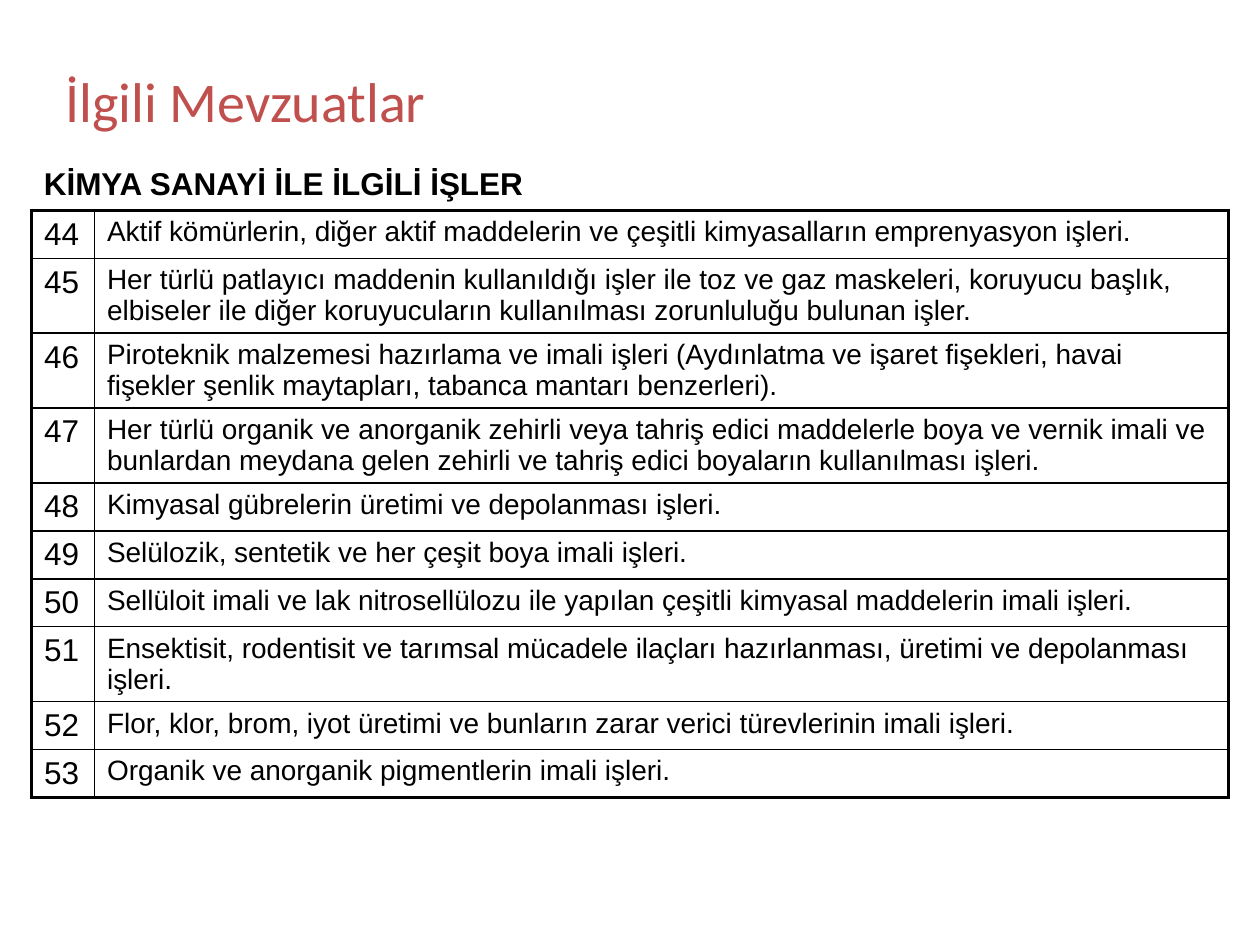
from lxml.etree import SubElement
from pptx import Presentation
from pptx.dml.color import RGBColor
from pptx.enum.text import MSO_ANCHOR, PP_ALIGN
from pptx.oxml.ns import qn
from pptx.util import Inches, Pt

COLORS = {"title": "C0504D", "text": "000000", "border": "000000"}
TITLE = "İlgili Mevzuatlar"
HEADING = "KİMYA SANAYİ İLE İLGİLİ İŞLER"
FIRST_NUMBER = 44
JOBS = [
    "Aktif kömürlerin, diğer aktif maddelerin ve çeşitli kimyasalların emprenyasyon işleri.",
    "Her türlü patlayıcı maddenin kullanıldığı işler ile toz ve gaz maskeleri, koruyucu başlık, "
    "elbiseler ile diğer koruyucuların kullanılması zorunluluğu bulunan işler.",
    "Piroteknik malzemesi hazırlama ve imali işleri (Aydınlatma ve işaret fişekleri, havai "
    "fişekler şenlik maytapları, tabanca mantarı benzerleri).",
    "Her türlü organik ve anorganik zehirli veya tahriş edici maddelerle boya ve vernik imali ve "
    "bunlardan meydana gelen zehirli ve tahriş edici boyaların kullanılması işleri.",
    "Kimyasal gübrelerin üretimi ve depolanması işleri.",
    "Selülozik, sentetik ve her çeşit boya imali işleri.",
    "Sellüloit imali ve lak nitrosellülozu ile yapılan çeşitli kimyasal maddelerin imali işleri.",
    "Ensektisit, rodentisit ve tarımsal mücadele ilaçları hazırlanması, üretimi ve depolanması işleri.",
    "Flor, klor, brom, iyot üretimi ve bunların zarar verici türevlerinin imali işleri.",
    "Organik ve anorganik pigmentlerin imali işleri.",
]
COLUMN_WIDTHS = (0.5, 9)
ONE_LINE_HEIGHT, TWO_LINE_HEIGHT = 0.38, 0.59
LINE_CAPACITY = 92  # characters that fit on one line of the job column
THIN, THICK = 1, 2.25


def write_text(text_frame, text, size, font="Arial", color="text", bold=False):
    paragraph = text_frame.paragraphs[0]
    paragraph.alignment = PP_ALIGN.LEFT
    run = paragraph.add_run()
    run.text = text
    run.font.name = font
    run.font.size = Pt(size)
    run.font.bold = bold
    run.font.color.rgb = RGBColor.from_string(COLORS[color])


def set_borders(cell, **widths):
    """Draw solid borders; widths in points are keyed L, R, T, B in that order."""
    properties = cell._tc.get_or_add_tcPr()
    for side, width in widths.items():
        line = SubElement(properties, qn(f"a:ln{side}"), w=str(Pt(width)))
        fill = SubElement(line, qn("a:solidFill"))
        SubElement(fill, qn("a:srgbClr"), val=COLORS["border"])


def add_job_table(slide):
    heights = [TWO_LINE_HEIGHT if len(job) > LINE_CAPACITY else ONE_LINE_HEIGHT for job in JOBS]
    table = slide.shapes.add_table(
        len(JOBS), len(COLUMN_WIDTHS), Inches(0.25), Inches(1.67),
        Inches(sum(COLUMN_WIDTHS)), Inches(sum(heights)),
    ).table
    table.first_row = table.horz_banding = False
    for column, width in zip(table.columns, COLUMN_WIDTHS):
        column.width = Inches(width)

    last_row = len(JOBS) - 1
    for row, (job, height) in enumerate(zip(JOBS, heights)):
        table.rows[row].height = Inches(height)
        for column, (text, size) in enumerate(((str(FIRST_NUMBER + row), 18), (job, 16))):
            cell = table.cell(row, column)
            write_text(cell.text_frame, text, size)
            set_borders(
                cell,
                L=THICK if column == 0 else THIN,
                R=THICK if column == 1 else THIN,
                T=THICK if row == 0 else THIN,
                B=THICK if row == last_row else THIN,
            )
            cell.fill.background()


def main():
    presentation = Presentation()
    presentation.slide_width, presentation.slide_height = Inches(10), Inches(7.5)
    slide = presentation.slides.add_slide(presentation.slide_layouts[5])

    title = slide.shapes.title
    title.left, title.top = Inches(0.42), Inches(0.17)
    title.width, title.height = Inches(9), Inches(1.25)
    title.text_frame.vertical_anchor = MSO_ANCHOR.MIDDLE
    write_text(title.text_frame, TITLE, 32, font="Calibri", color="title")

    add_job_table(slide)

    heading = slide.shapes.add_textbox(Inches(0.25), Inches(1.25), Inches(4.06), Inches(0.4))
    heading.text_frame.word_wrap = False
    write_text(heading.text_frame, HEADING, 18, bold=True)

    presentation.save("out.pptx")


if __name__ == "__main__":
    main()
